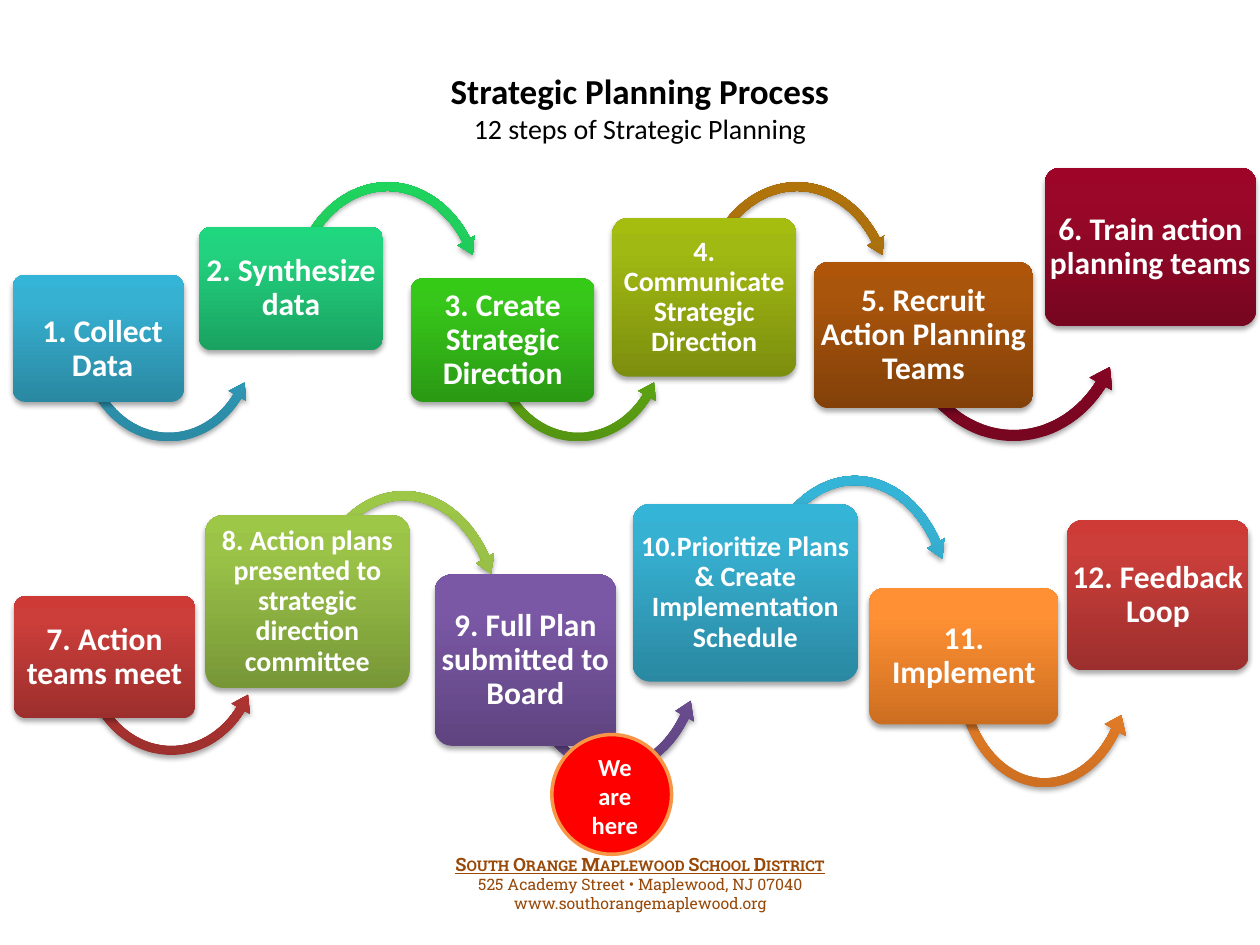
from copy import deepcopy

from lxml.etree import SubElement
from pptx import Presentation
from pptx.dml.color import RGBColor
from pptx.enum.shapes import MSO_SHAPE as Kind
from pptx.enum.text import MSO_ANCHOR as Anchor, MSO_AUTO_SIZE as Fit, PP_ALIGN as Align
from pptx.oxml.ns import qn
from pptx.util import Inches, Pt

BLACK = RGBColor(0x00, 0x00, 0x00)
WHITE = RGBColor(0xFF, 0xFF, 0xFF)
BROWN = RGBColor(0x98, 0x48, 0x07)
RED = RGBColor(0xFF, 0x00, 0x00)
RIM = RGBColor(0xF7, 0x96, 0x46)


def shades(*codes):
    return [RGBColor.from_string(code) for code in codes]


# Gradients run from the bottom edge to the top edge.
BLUE = shades("2A88A2", "37B1D2", "34B4D6")
MINT = shades("1AA261", "22D27E", "1FD77F")
JADE = shades("19A047", "20CF5D", "1DD45C")
GREEN = shades("2A9914", "37C61A", "35CA16")
LEAF = shades("539311", "6CBF16", "6CC313")
OLIVE = shades("7C8E0E", "A1B913", "A4BD0F")
GOLD = shades("86580A", "AD720E", "B1740A")
RUST = shades("834109", "AA550C", "AE5509")
WINE = shades("770620", "9B0729", "9E0428")
BRICK = shades("9C2F2D", "CB3E3A", "CE3B37")
LIME = shades("779737", "9BC348", "9DC746")
PLUM = shades("5F4480", "7B58A6", "7C57A8")
AMBER = shades("CC6E20", "FF9034", "FF9136")
STOPS = (0, 0.8, 1)

# Arrow forms: preset shape and its adjustments.
DIP, HOP = Kind.LEFT_CIRCULAR_ARROW, Kind.CIRCULAR_ARROW
DIP_A = (DIP, (0.046, 5.858, 23.613, 90.245, 0.054))
HOP_A = (HOP, (0.042, 5.277, 192.968, 125.755, 0.049))
DIP_B = (DIP, (0.047, 5.981, 23.736, 90.245, 0.055))
HOP_B = (HOP, (0.043, 5.391, 192.854, 125.755, 0.05))
DIP_C = (DIP, (0.047, 5.981, 23.736, 90.245, 0.064))

# Text, size, box, box shades, arrow (form, place, shades) to the next step.
STEPS = [
    ("1. Collect Data", 18, (0.1, 2.18, 1.36, 1.01), BLUE,
     (DIP_A, (0.59, 1.84, 1.5, 1.71), BLUE)),
    ("2. Synthesize data", 18, (1.58, 1.8, 1.46, 0.98), MINT,
     (HOP_A, (2.25, 1.4, 1.65, 2.01), JADE)),
    ("3. Create Strategic Direction", 18, (3.26, 2.21, 1.46, 0.98), GREEN,
     (DIP_A, (3.84, 1.84, 1.5, 1.71), LEAF)),
    ("4. Communicate Strategic Direction", 16, (4.86, 1.73, 1.46, 1.26), OLIVE,
     (HOP_A, (5.5, 1.4, 1.65, 2.01), GOLD)),
    ("5. Recruit Action Planning Teams", 18, (6.46, 2.08, 1.74, 1.16), RUST,
     (DIP_A, (7.09, 1.4, 1.91, 2.16), WINE)),
    ("6. Train action planning teams", 18, (8.29, 1.33, 1.68, 1.26), WINE, None),
    ("7. Action teams meet", 18, (0.11, 4.73, 1.44, 0.97), BRICK,
     (DIP_B, (0.6, 4.3, 1.52, 1.74), BRICK)),
    ("8. Action plans presented to strategic direction committee", 16,
     (1.63, 4.09, 1.62, 1.37), LIME,
     (HOP_B, (2.37, 3.85, 1.67, 2.19), LIME)),
    ("9. Full Plan submitted to Board", 18, (3.45, 4.56, 1.44, 1.36), PLUM,
     (DIP_B, (4.1, 4.23, 1.52, 1.96), PLUM)),
    ("10.Prioritize Plans & Create Implementation Schedule", 16,
     (5.02, 4, 1.79, 1.41), BLUE,
     (HOP_B, (5.95, 3.73, 1.67, 2.19), BLUE)),
    ("11. Implement", 18, (6.9, 4.67, 1.5, 1.08), AMBER,
     (DIP_C, (7.53, 4.35, 1.52, 1.96), AMBER)),
    ("12. Feedback Loop", 18, (8.47, 4.13, 1.44, 1.19), BRICK, None),
]


def inset(frame, left, top, right, bottom):
    frame.margin_left, frame.margin_top = Inches(left), Inches(top)
    frame.margin_right, frame.margin_bottom = Inches(right), Inches(bottom)


def add_run(para, text, size, color, bold=False, face="Calibri"):
    run = para.add_run()
    run.text = text
    font = run.font
    font.name, font.size, font.bold = face, Pt(size), bold
    font.color.rgb = color
    return run


def write(frame, lines, anchor=Anchor.TOP):
    """Put one centred paragraph in the frame for each tuple of run values."""
    frame.word_wrap = True
    frame.auto_size = Fit.NONE
    frame.vertical_anchor = anchor
    runs = []
    for i, line in enumerate(lines):
        para = frame.add_paragraph() if i else frame.paragraphs[0]
        para.alignment = Align.CENTER
        runs.append(add_run(para, *line))
    return runs


def add_block(slide, kind, place, tones):
    """Add a borderless shape with a vertical gradient and a soft shadow."""
    shape = slide.shapes.add_shape(kind, *map(Inches, place))
    shape.line.fill.background()
    fill = shape.fill
    fill.gradient()
    fill.gradient_angle = 90
    props = shape._element.spPr
    marks = props.find(qn("a:gradFill")).find(qn("a:gsLst"))
    marks.append(deepcopy(marks[-1]))
    for stop, spot, tone in zip(fill.gradient_stops, STOPS, tones):
        stop.position, stop.color.rgb = spot, tone

    shape.shadow.inherit = False
    shade = SubElement(props.find(qn("a:effectLst")), qn("a:outerShdw"),
                       blurRad=str(Pt(3.1)), dist=str(Pt(1.8)),
                       dir="5400000", rotWithShape="0")
    black = SubElement(shade, qn("a:srgbClr"), val="000000")
    SubElement(black, qn("a:alpha"), val="35000")
    return shape


def add_arrow(slide, form, place, tones):
    kind, bends = form
    arrow = add_block(slide, kind, place, tones)
    for i, bend in enumerate(bends):
        arrow.adjustments[i] = bend


def add_step(slide, text, size, place, tones):
    box = add_block(slide, Kind.ROUNDED_RECTANGLE, place, tones)
    box.adjustments[0] = 0.1
    frame = box.text_frame
    write(frame, [(text, size, WHITE, True)], Anchor.MIDDLE)
    frame.paragraphs[0].line_spacing = 0.9
    inset(frame, 0, 0, 0, 0)
    return box


def add_title(slide):
    title = slide.shapes.title
    title.left, title.top, title.width, title.height = map(Inches, (1.58, 0.5, 7, 0.71))
    write(title.text_frame, [
        ("Strategic Planning Process", 20, BLACK, True),
        ("12 steps of Strategic Planning", 16, BLACK),
    ])


def add_footer(slide):
    box = slide.shapes.add_textbox(*map(Inches, (2.37, 6.72, 5.42, 0.58)))
    face = "Roboto Slab"
    head = write(box.text_frame, [
        ("South Orange Maplewood School District", 10.5, BROWN, True, face),
        ("525 Academy Street • Maplewood, NJ 07040", 9, BROWN, False, face),
        ("www.southorangemaplewood.org", 9, BROWN, False, face),
    ])[0]
    head.font.underline = True
    head._r.get_or_add_rPr().set("cap", "small")


def add_marker(slide):
    spot = slide.shapes.add_shape(Kind.OVAL, *map(Inches, (4.38, 5.83, 0.95, 0.95)))
    spot.shadow.inherit = False
    spot.fill.solid()
    spot.fill.fore_color.rgb = RED
    spot.line.color.rgb, spot.line.width = RIM, Pt(2)
    write(spot.text_frame, [("We are here", 14, WHITE, True)], Anchor.MIDDLE)
    inset(spot.text_frame, 0.14, 0.02, 0.09, 0)


def main():
    deck = Presentation()
    deck.slide_width, deck.slide_height = Inches(10), Inches(7.5)
    slide = deck.slides.add_slide(deck.slide_layouts[5])
    add_title(slide)
    boxes = []
    for text, size, place, tones, arrow in STEPS:
        if arrow:
            add_arrow(slide, *arrow)
        boxes.append(add_step(slide, text, size, place, tones))
    inset(boxes[0].text_frame, 0.07, 0.18, 0, 0)
    add_footer(slide)
    add_marker(slide)
    deck.save("out.pptx")


if __name__ == "__main__":
    main()
